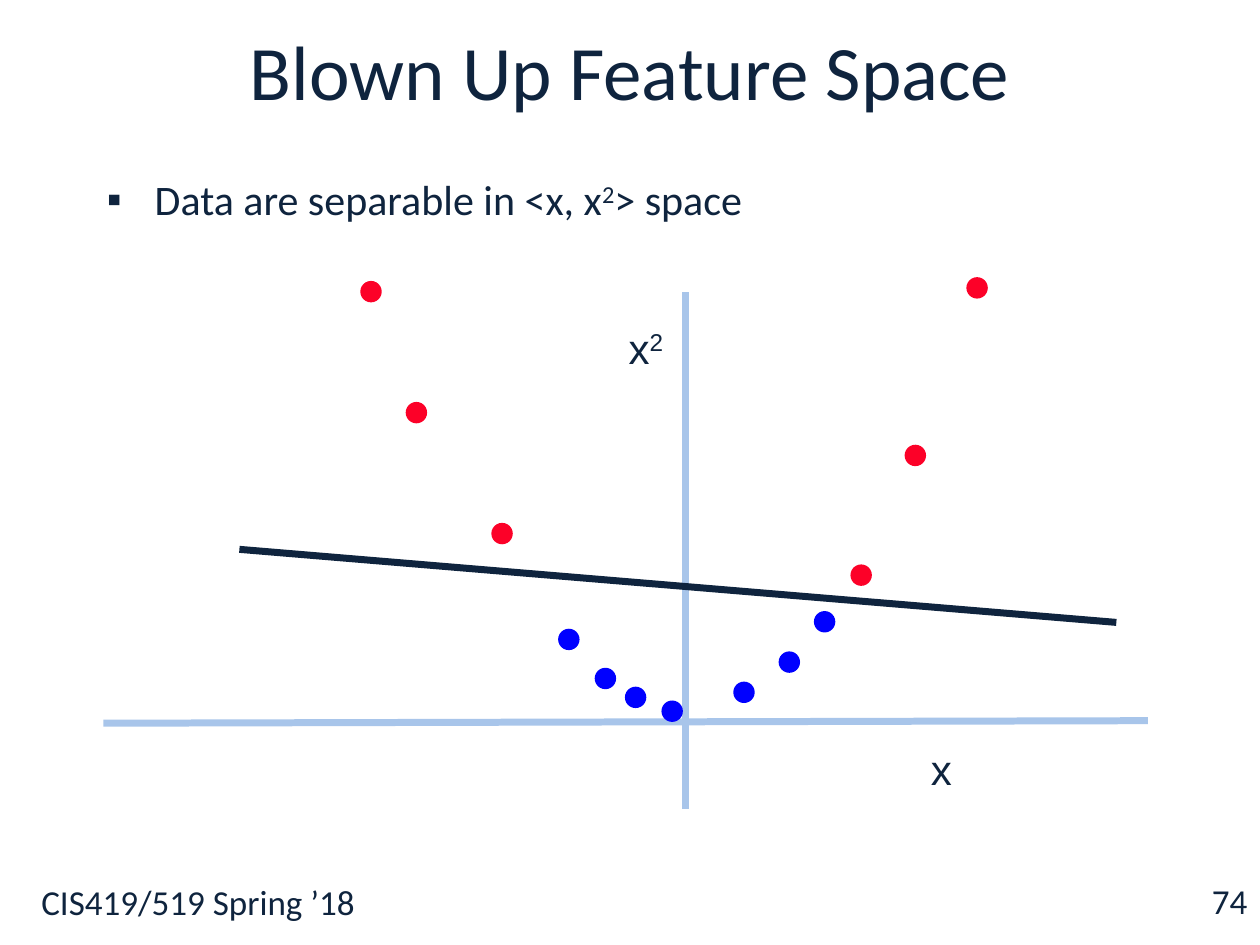
from lxml.etree import SubElement
from pptx import Presentation
from pptx.dml.color import RGBColor
from pptx.enum.shapes import MSO_CONNECTOR, MSO_SHAPE
from pptx.enum.text import MSO_ANCHOR, MSO_AUTO_SIZE, PP_ALIGN
from pptx.oxml.ns import qn
from pptx.util import Inches, Pt

NAVY, PALE_BLUE, BLUE, RED = "0F243E", "A8C5EA", "0000FF", "FC0128"
color = RGBColor.from_string

deck = Presentation()
deck.slide_width, deck.slide_height = Inches(10), Inches(7.5)
COL, ROW = deck.slide_width / 100, deck.slide_height / 75
slide = deck.slides.add_slide(deck.slide_layouts[5])
shapes = slide.shapes


def grid(x, y):
    return int(x * COL), int(y * ROW)


def write(holder, runs, size, font="Calibri", align=PP_ALIGN.LEFT, anchor=MSO_ANCHOR.TOP, wrap=True):
    """Fill a shape with (text, is_superscript) runs and return the paragraph."""
    frame = holder.text_frame
    frame.word_wrap = wrap
    frame.auto_size = MSO_AUTO_SIZE.NONE if wrap else MSO_AUTO_SIZE.SHAPE_TO_FIT_TEXT
    frame.vertical_anchor = anchor
    paragraph = frame.paragraphs[0]
    paragraph.alignment = align
    for text, is_superscript in runs:
        run = paragraph.add_run()
        run.text = text
        run.font.size, run.font.name = Pt(size), font
        run.font.color.rgb = color(NAVY)
        if is_superscript:
            run.font._element.set("baseline", "30000")
    return paragraph


# Title, statement and footer
title = shapes.title
title.left, title.top = grid(7.5, 0.3)
title.width, title.height = grid(85, 10.5)
write(title, [("Blown Up Feature Space", False)], 44, align=PP_ALIGN.CENTER, anchor=MSO_ANCHOR.MIDDLE)

footer = shapes.add_textbox(*grid(2.3, 69.4), *grid(95.6, 5.6))
write(footer, [("CIS419/519 Spring ’18", False)], 20).space_before = Pt(4)

statement = shapes.add_textbox(*grid(7.5, 13.3), *grid(85, 54.5))
bullet = write(statement, [("Data are separable in <x, x", False), ("2", True), ("> space", False)], 24)
bullet.space_before = Pt(4.8)
bullet_format = bullet._p.get_or_add_pPr()
bullet_format.set("marL", str(Inches(0.38)))
bullet_format.set("indent", str(-Inches(0.38)))
SubElement(bullet_format, qn("a:buFont"), typeface="Arial")
SubElement(bullet_format, qn("a:buChar"), char="▪")

page_number = shapes.add_textbox(*grid(76.7, 69.5), *grid(23.3, 4))
write(page_number, [("74", False)], 20, align=PP_ALIGN.RIGHT, anchor=MSO_ANCHOR.MIDDLE)

# Axes, then the separating line
for start, end, line_color in [
    ((8.2, 57.4), (91.1, 57.2), PALE_BLUE),
    ((54.4, 64.2), (54.4, 23.2), PALE_BLUE),
    ((19, 43.6), (88.6, 49.4), NAVY),
]:
    line = shapes.add_connector(MSO_CONNECTOR.STRAIGHT, *grid(*start), *grid(*end))
    line.line.color.rgb = color(line_color)
    line.line.width = Pt(4)
    SubElement(line._element.spPr, qn("a:effectLst"))

# Samples of the two classes, by top left corner
inner_class = [(44.3, 49.9), (47.2, 53), (49.6, 54.5), (52.5, 55.6),
               (58.2, 54.1), (61.8, 51.7), (64.6, 48.5)]
outer_class = [(28.6, 22.3), (32.2, 31.9), (39, 41.5),
               (67.5, 44.8), (71.8, 35.3), (76.7, 22)]
for samples, class_color in [(inner_class, BLUE), (outer_class, RED)]:
    for corner in samples:
        dot = shapes.add_shape(MSO_SHAPE.OVAL, *grid(*corner), *grid(1.7, 1.7))
        dot.shadow.inherit = False
        dot.fill.solid()
        dot.fill.fore_color.rgb = color(class_color)
        dot.line.fill.background()

# Axis labels
for corner, extent, label in [
    ((72.9, 58.5), (3.7, 5), [("x", False)]),
    ((48.9, 25.1), (4.9, 5), [("x", False), ("2", True)]),
]:
    axis_label = shapes.add_textbox(*grid(*corner), *grid(*extent))
    write(axis_label, label, 24, font="Arial", wrap=False)

deck.save("out.pptx")
